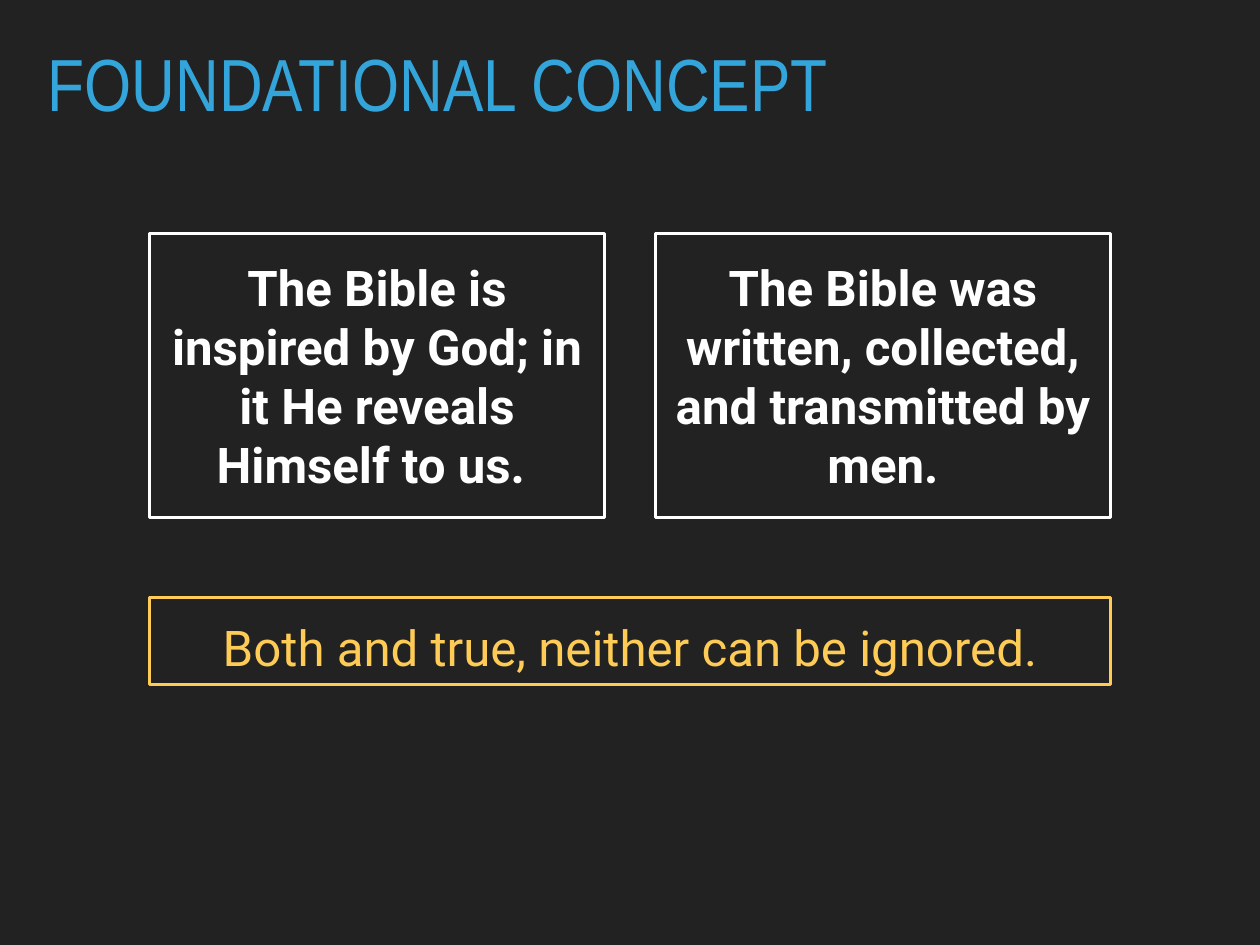
from dataclasses import dataclass

from pptx import Presentation
from pptx.dml.color import RGBColor
from pptx.enum.shapes import MSO_SHAPE
from pptx.enum.text import MSO_ANCHOR, PP_ALIGN
from pptx.util import Inches, Pt

RECTANGLE = MSO_SHAPE.RECTANGLE
MIDDLE = MSO_ANCHOR.MIDDLE
LEFT, CENTER = PP_ALIGN.LEFT, PP_ALIGN.CENTER


@dataclass(frozen=True)
class Theme:
    background: RGBColor = RGBColor(0x22, 0x22, 0x22)
    title: RGBColor = RGBColor(0x34, 0xA5, 0xDA)
    statement: RGBColor = RGBColor(0xFF, 0xFF, 0xFF)
    conclusion: RGBColor = RGBColor(0xFD, 0xCB, 0x56)
    title_font: str = "Arial Narrow"
    body_font: str = "Roboto"
    title_size: int = 60
    body_size: int = 40
    outline: float = 2.25
    inset: float = 0.06


@dataclass(frozen=True)
class Grid:
    """Two equal columns between the side margins, in inches."""
    width: float = 14.22
    height: float = 10.67
    margin: float = 1.69
    gutter: float = 0.58
    columns: int = 2

    def span(self, columns: int) -> float:
        free = self.width - 2 * self.margin - (self.columns - 1) * self.gutter
        return columns * free / self.columns + (columns - 1) * self.gutter

    def left(self, column: int) -> float:
        return self.margin + column * (self.span(1) + self.gutter)


@dataclass(frozen=True)
class Row:
    top: float
    height: float


@dataclass(frozen=True)
class Panel:
    text: str
    row: Row
    column: int
    columns: int
    color: RGBColor
    bold: bool
    line_spacing: float
    space_after: int


THEME = Theme()
GRID = Grid()
TITLE_ROW = Row(0.47, 1.1)
STATEMENT_ROW = Row(2.64, 3.2)
CONCLUSION_ROW = Row(6.75, 0.98)
TITLE_MARGIN = 0.44

STATEMENTS = (
    "The Bible is inspired by God; in it He reveals Himself to us. ",
    "The Bible was written, collected, and transmitted by men.",
)
PANELS = [
    Panel(text, STATEMENT_ROW, column, 1, THEME.statement, True, 1.0, 6)
    for column, text in enumerate(STATEMENTS)
] + [
    Panel("Both and true, neither can be ignored.", CONCLUSION_ROW, 0, 2,
          THEME.conclusion, False, 1.2, 0)
]


def write(frame, text: str, font: str, size: int, color: RGBColor,
          align: PP_ALIGN, line_spacing: float, bold: bool = False,
          space_after: int = 0) -> None:
    frame.word_wrap = True
    frame.vertical_anchor = MIDDLE
    para = frame.paragraphs[0]
    para.alignment = align
    para.line_spacing = line_spacing
    para.space_after = Pt(space_after)
    span = para.add_run()
    span.text = text
    span.font.name = font
    span.font.size = Pt(size)
    span.font.bold = bold
    span.font.color.rgb = color


def draw_title(page, text: str) -> None:
    box = page.shapes.add_textbox(
        Inches(TITLE_MARGIN), Inches(TITLE_ROW.top),
        Inches(GRID.width - 2 * TITLE_MARGIN), Inches(TITLE_ROW.height))
    write(box.text_frame, text, THEME.title_font, THEME.title_size,
          THEME.title, LEFT, 0.8)


def draw_panel(page, panel: Panel) -> None:
    box = page.shapes.add_shape(
        RECTANGLE, Inches(GRID.left(panel.column)), Inches(panel.row.top),
        Inches(GRID.span(panel.columns)), Inches(panel.row.height))
    box.shadow.inherit = False
    box.fill.solid()
    box.fill.fore_color.rgb = THEME.background
    box.line.color.rgb = panel.color
    box.line.width = Pt(THEME.outline)
    frame = box.text_frame
    frame.margin_left = frame.margin_right = Inches(THEME.inset)
    frame.margin_top = frame.margin_bottom = Inches(THEME.inset)
    write(frame, panel.text, THEME.body_font, THEME.body_size, panel.color,
          CENTER, panel.line_spacing, panel.bold, panel.space_after)


def main() -> None:
    # Deck and dark page
    deck = Presentation()
    deck.slide_width = Inches(GRID.width)
    deck.slide_height = Inches(GRID.height)
    page = deck.slides.add_slide(deck.slide_layouts[6])
    page.background.fill.solid()
    page.background.fill.fore_color.rgb = THEME.background

    # Title, then the two statements and their conclusion
    draw_title(page, "FOUNDATIONAL CONCEPT")
    for panel in PANELS:
        draw_panel(page, panel)

    deck.save("out.pptx")


if __name__ == "__main__":
    main()
